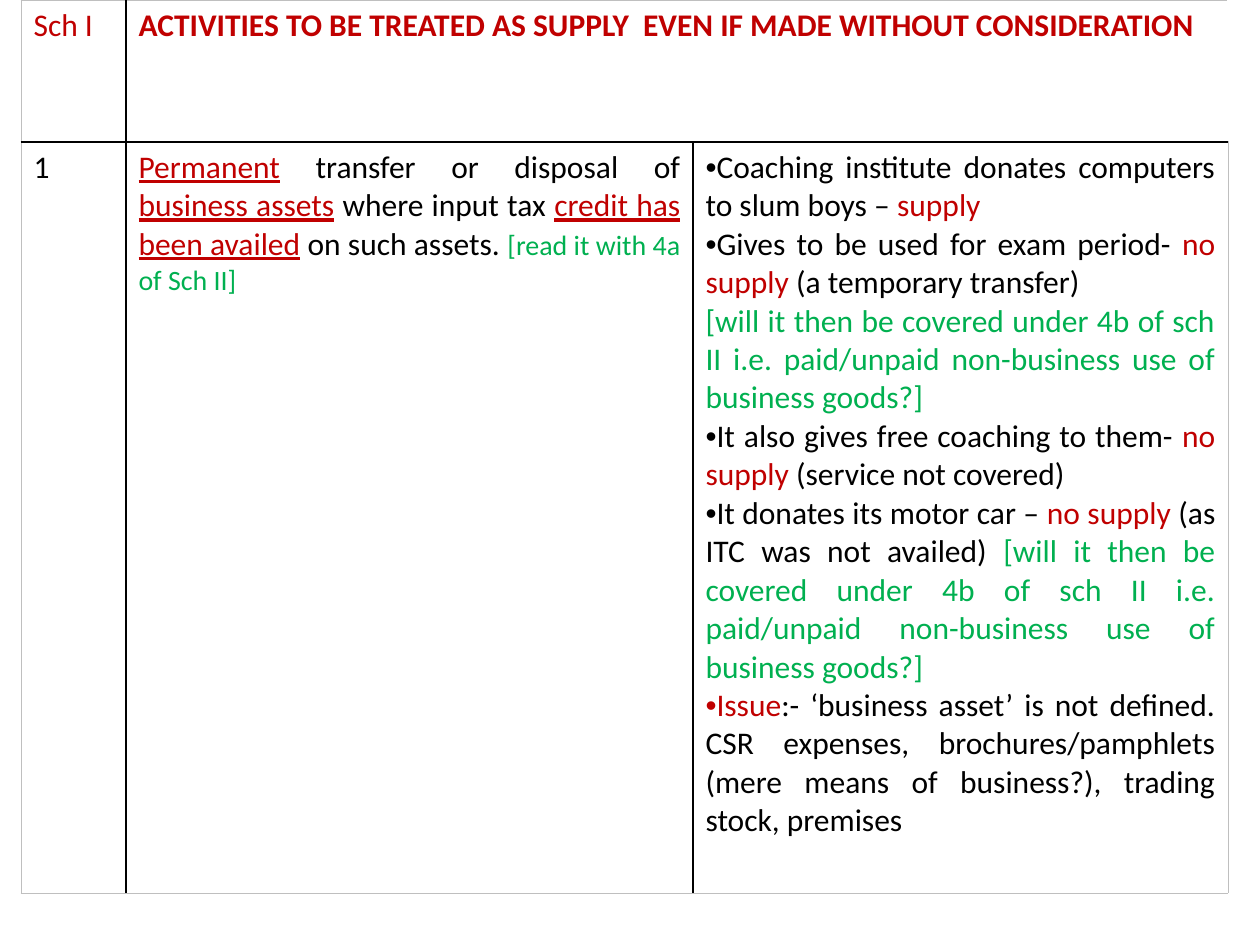
from lxml.etree import SubElement as Sub
from pptx import Presentation
from pptx.dml.color import RGBColor as RGB
from pptx.enum.text import PP_ALIGN as Align
from pptx.oxml.ns import qn
from pptx.util import Emu, Pt

PX = 914400 / 126
BLACK, RED, GREEN, GREY, WHITE = "000000", "C00000", "00B050", "BFBFBF", "FFFFFF"
COLS, ROWS = (105, 567, 535), (142, 751)

LINE = {"underline": True}
USE = ("[will it then be covered under 4b of sch II i.e. "
       "paid/unpaid non-business use of business goods?]", GREEN)
NONE = ("no supply", RED)

HEAD = [("ACTIVITIES TO BE TREATED AS SUPPLY  EVEN IF MADE WITHOUT CONSIDERATION",
         RED, {"bold": True})]
RULE = [
    ("Permanent", RED, LINE),
    (" transfer or disposal of ", BLACK),
    ("business assets", RED, LINE),
    (" where input tax ", BLACK),
    ("credit has been availed", RED, LINE),
    (" on such assets. ", BLACK),
    ("[read it with 4a of Sch II]", GREEN, {"size": Pt(16)}),
]
# Each case: whether it has a bullet, then its runs
CASES = [
    (True, [("Coaching institute donates computers to slum boys – ", BLACK),
            ("supply", RED)]),
    (True, [("Gives to be used for exam period- ", BLACK), NONE,
            (" (a temporary transfer)", BLACK)]),
    (False, [USE]),
    (True, [("It also gives free coaching to them- ", BLACK), NONE,
            (" (service not covered)", BLACK)]),
    (True, [("It donates its motor car – ", BLACK), NONE,
            (" (as ITC was not availed) ", BLACK), USE]),
    (True, [("Issue", RED),
            (":- ‘business asset’ is not defined. CSR expenses, "
             "brochures/pamphlets (mere means of business?), "
             "trading stock, premises", BLACK)]),
]


def px(n):
    return Emu(round(n * PX))


def color(code):
    return RGB.from_string(code)


def add_run(para, text, code, form=None):
    run = para.add_run()
    run.text = text
    base = {"name": "Calibri", "size": Pt(18), "bold": False}
    for key, val in {**base, **(form or {})}.items():
        setattr(run.font, key, val)
    run.font.color.rgb = color(code)


def add_dot(para):
    """Give the paragraph a bullet with no indent."""
    props = para._p.get_or_add_pPr()
    props.set("marL", "0")
    props.set("indent", "0")
    Sub(props, qn("a:buFont")).set("typeface", "Arial")
    Sub(props, qn("a:buChar")).set("char", "•")


def write(cell, paras, align=Align.LEFT):
    frame = cell.text_frame
    for i, (dot, runs) in enumerate(paras):
        para = frame.add_paragraph() if i else frame.paragraphs[0]
        para.alignment = align
        if dot:
            add_dot(para)
        for run in runs:
            add_run(para, *run)


def add_edge(cell, side, code, width):
    edge = Sub(cell._tc.get_or_add_tcPr(), qn(f"a:ln{side}"), w=str(Pt(width)))
    fill = Sub(edge, qn("a:solidFill"))
    Sub(fill, qn("a:srgbClr")).set("val", code)


def style(cell, row, col):
    """Draw grey outer edges and black inner ones on a white cell."""
    last_row, last_col = len(ROWS) - 1, len(COLS) - 1
    outer = {"L": col == 0, "R": col == last_col,
             "T": row == 0, "B": row == last_row}
    joined = {(0, 1): "R", (0, 2): "L"}.get((row, col))
    for side, out in outer.items():
        if side != joined:
            add_edge(cell, side, *((GREY, 0.5) if out else (BLACK, 1)))
    cell.fill.solid()
    cell.fill.fore_color.rgb = color(WHITE)


def add_grid(slide):
    grid = slide.shapes.add_table(len(ROWS), len(COLS), px(21), px(0),
                                  px(sum(COLS)), px(sum(ROWS))).table
    grid.first_row = grid.horz_banding = False
    for col, width in zip(grid.columns, COLS):
        col.width = px(width)
    for row, height in zip(grid.rows, ROWS):
        row.height = px(height)
    for r in range(len(ROWS)):
        for c in range(len(COLS)):
            style(grid.cell(r, c), r, c)
    grid.cell(0, 1).merge(grid.cell(0, 2))
    return grid


def main():
    deck = Presentation()
    deck.slide_width, deck.slide_height = px(1260), px(945)
    grid = add_grid(deck.slides.add_slide(deck.slide_layouts[6]))
    write(grid.cell(0, 0), [(False, [("Sch I", RED)])])
    write(grid.cell(0, 1), [(False, HEAD)])
    write(grid.cell(1, 0), [(False, [("1", BLACK)])])
    write(grid.cell(1, 1), [(False, RULE)], Align.JUSTIFY)
    write(grid.cell(1, 2), CASES, Align.JUSTIFY)
    deck.save("out.pptx")


if __name__ == "__main__":
    main()
